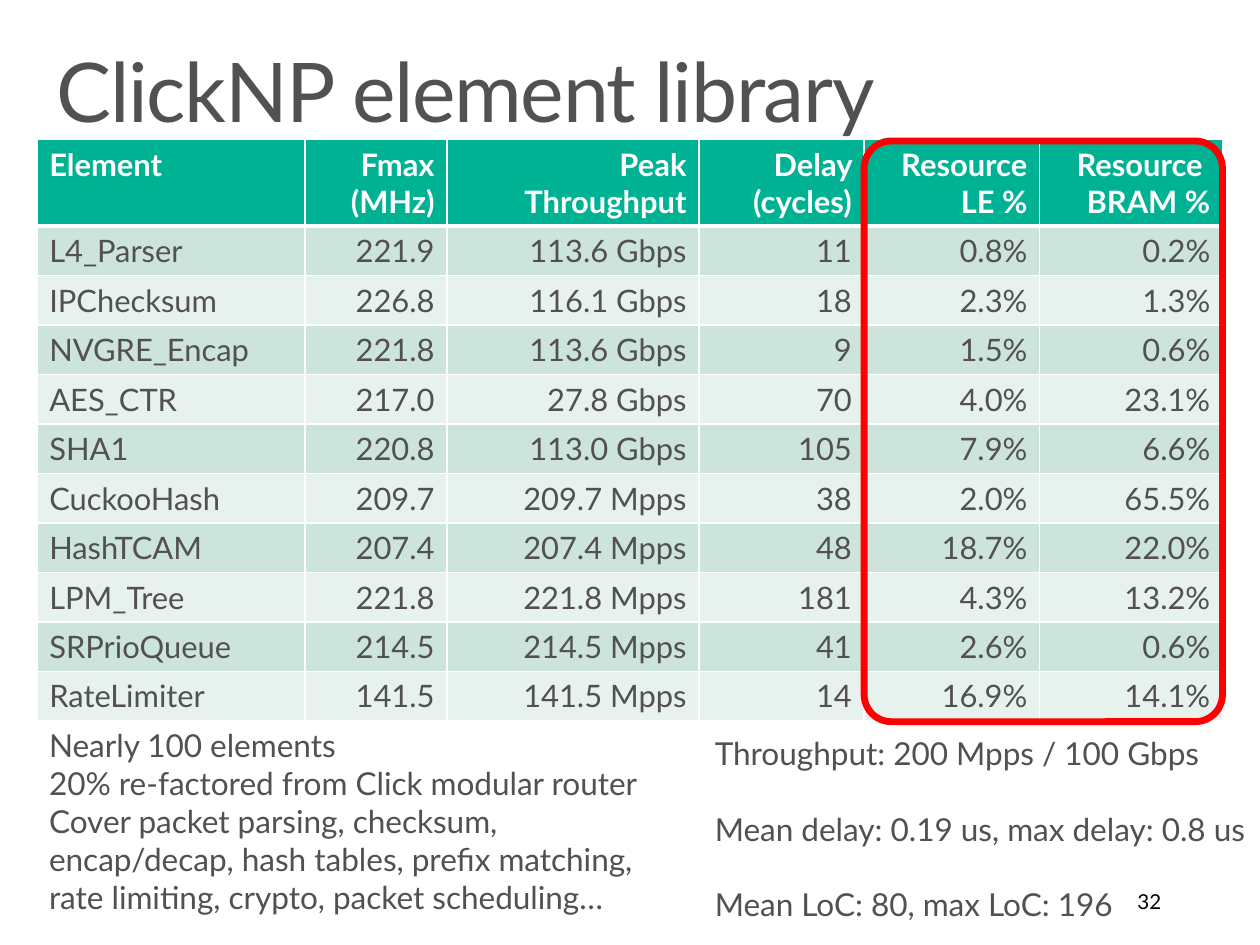
"""Build the ClickNP element library slide."""
from lxml import etree
from pptx import Presentation
from pptx.dml.color import RGBColor
from pptx.enum import shapes, text
from pptx.oxml import ns
from pptx.util import Cm, Pt

TITLE = "ClickNP element library"
ROWS = [
    ("Element", "Fmax (MHz)", "Peak Throughput", "Delay (cycles)",
     "Resource LE %", "Resource \nBRAM %"),
    ("L4_Parser", "221.9", "113.6 Gbps", "11", "0.8%", "0.2%"),
    ("IPChecksum", "226.8", "116.1 Gbps", "18", "2.3%", "1.3%"),
    ("NVGRE_Encap", "221.8", "113.6 Gbps", "9", "1.5%", "0.6%"),
    ("AES_CTR", "217.0", "27.8 Gbps", "70", "4.0%", "23.1%"),
    ("SHA1", "220.8", "113.0 Gbps", "105", "7.9%", "6.6%"),
    ("CuckooHash", "209.7", "209.7 Mpps", "38", "2.0%", "65.5%"),
    ("HashTCAM", "207.4", "207.4 Mpps", "48", "18.7%", "22.0%"),
    ("LPM_Tree", "221.8", "221.8 Mpps", "181", "4.3%", "13.2%"),
    ("SRPrioQueue", "214.5", "214.5 Mpps", "41", "2.6%", "0.6%"),
    ("RateLimiter", "141.5", "141.5 Mpps", "14", "16.9%", "14.1%"),
]
SCOPE = [
    "Nearly 100 elements",
    "20% re-factored from Click modular router",
    "Cover packet parsing, checksum,\vencap/decap, hash tables, prefix matching,"
    "\vrate limiting, crypto, packet scheduling…",
]
STATS = [
    "Throughput: 200 Mpps / 100 Gbps",
    "Mean delay: 0.19 us, max delay: 0.8 us",
    "Mean LoC: 80, max LoC: 196",
]
PAGE = "32"

HUES = {"ink": "525051", "head": "00B294", "odd": "CCE4DC", "even": "E7F2EE",
        "white": "FFFFFF", "red": "FF0000", "black": "000000"}
FONT = "Lato"
LEFT, TOP = 0.76, 2.87
COLS = [5.51, 2.92, 5.18, 3.4, 3.61, 3.76]
HEAD, ROW = 1.78, 1.016
TALL = HEAD + ROW * (len(ROWS) - 1)


def tint(name):
    return RGBColor.from_string(HUES[name])


def style(par, size, hue="ink", bold=False, right=False):
    par.font.name, par.font.size, par.font.bold = FONT, Pt(size), bold
    par.font.color.rgb = tint(hue)
    par.alignment = text.PP_ALIGN.RIGHT if right else text.PP_ALIGN.LEFT


def write(slide, box, lines, size, hue="ink", right=False, gap=0):
    frame = slide.shapes.add_textbox(*map(Cm, box)).text_frame
    frame.text = "\n".join(lines)
    frame.word_wrap = False
    for i, par in enumerate(frame.paragraphs):
        style(par, size, hue, right=right)
        if i and gap:
            par.space_before = Pt(gap)
    return frame


def edge(cell, row):
    props = cell._tc.get_or_add_tcPr()
    wide = {"lnT": 3 if row == 1 else 1, "lnB": 3 if row == 0 else 1}
    for i, side in enumerate(("lnL", "lnR", "lnT", "lnB")):
        line = etree.Element(ns.qn("a:" + side), w=str(Pt(wide.get(side, 1))))
        fill = etree.SubElement(line, ns.qn("a:solidFill"))
        etree.SubElement(fill, ns.qn("a:srgbClr"), val=HUES["white"])
        props.insert(i, line)


def fill_table(slide):
    table = slide.shapes.add_table(
        len(ROWS), len(COLS), Cm(LEFT), Cm(TOP), Cm(sum(COLS)), Cm(TALL)).table
    table.horz_banding = False
    for col, wide in zip(table.columns, COLS):
        col.width = Cm(wide)
    for r, row in enumerate(ROWS):
        table.rows[r].height = Cm(ROW if r else HEAD)
        band = ("even", "odd")[r % 2] if r else "head"
        for c, words in enumerate(row):
            cell = table.cell(r, c)
            cell.text = words
            cell.fill.solid()
            cell.fill.fore_color.rgb = tint(band)
            edge(cell, r)
            for par in cell.text_frame.paragraphs:
                style(par, 18, "ink" if r else "white", r == 0, c > 0)


def main():
    deck = Presentation()
    deck.slide_width, deck.slide_height = Cm(25.91), Cm(19.43)
    slide = deck.slides.add_slide(deck.slide_layouts[6])

    title = write(slide, (LEFT, 0.81, sum(COLS), 2.54), [TITLE], 48)
    title.margin_left = title.margin_right = Cm(0.41)
    title.margin_top = title.margin_bottom = Cm(0.25)
    par = title.paragraphs[0]
    par.line_spacing = 0.9
    par.runs[0].font._element.set("spc", "-80")

    write(slide, (LEFT, 14.81, 13.13, 4.19), SCOPE, 18.4)
    write(slide, (14.45, 14.97, 11.46, 4.18), STATS, 18.4, gap=22)
    fill_table(slide)

    ring = slide.shapes.add_shape(
        shapes.MSO_SHAPE.ROUNDED_RECTANGLE, Cm(LEFT + sum(COLS[:4])),
        Cm(TOP + 0.03), Cm(sum(COLS[4:])), Cm(TALL))
    ring.adjustments[0] = 0.076
    ring.shadow.inherit = False
    ring.fill.background()
    ring.line.color.rgb = tint("red")
    ring.line.width = Pt(4)

    page = write(slide, (18.29, 18.01, 5.84, 1.04), [PAGE], 12, "black", True)
    page.word_wrap = True
    page.vertical_anchor = text.MSO_ANCHOR.MIDDLE
    deck.save("out.pptx")


if __name__ == "__main__":
    main()
